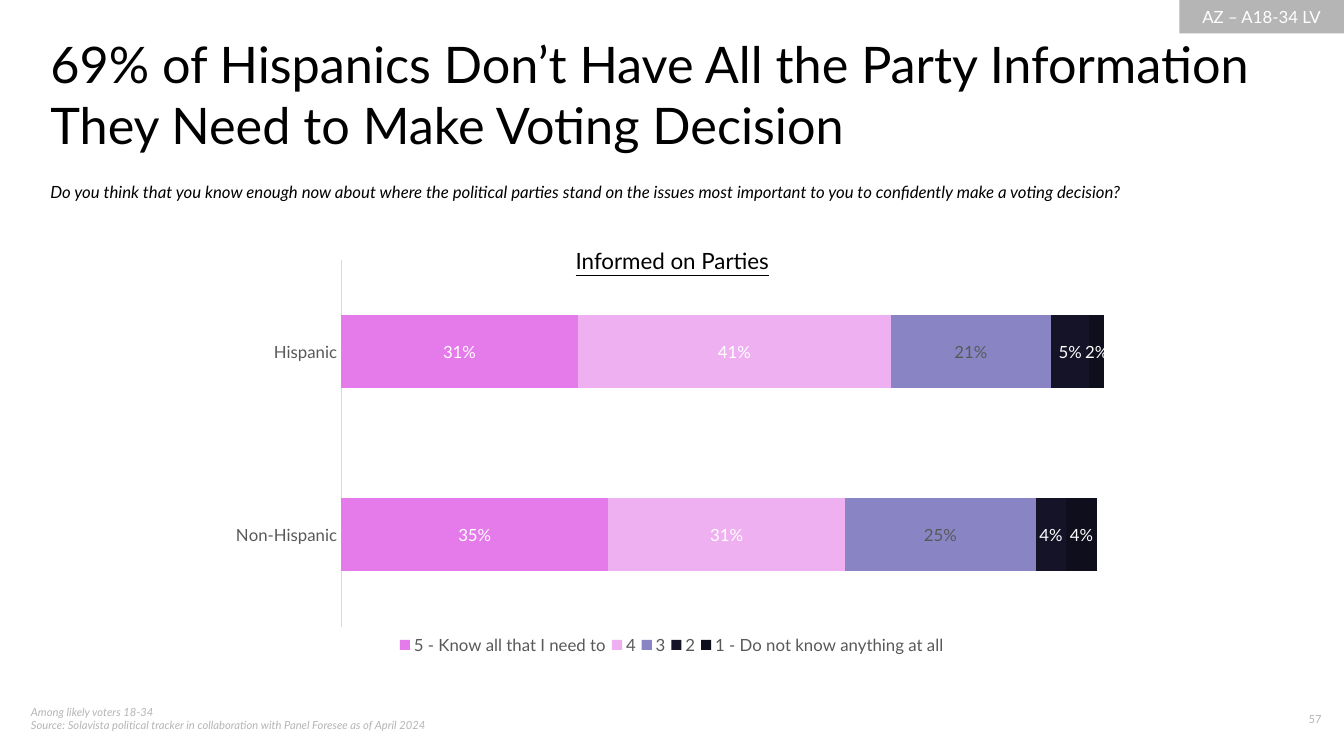
from lxml import etree
from pptx import Presentation
from pptx import util as u
from pptx.chart.data import CategoryChartData
from pptx.dml.color import RGBColor
from pptx.enum import chart as charts, shapes, text
from pptx.oxml import ns

COLORS = {"black": "000000", "white": "FFFFFF", "gray": "B5B5B5",
          "label": "595959", "axis": "D9D9D9"}
SERIES = [
    ("5 - Know all that I need to", (0.31, 0.35), "E57BEA", "white"),
    ("4", (0.41, 0.31), "EFB0F2", "white"),
    ("3", (0.21, 0.25), "8985C4", "label"),
    ("2", (0.05, 0.04), "141327", "white"),
    ("1 - Do not know anything at all", (0.02, 0.04), "0F0E1D", "white"),
]
LEFT, CENTER, RIGHT = text.PP_ALIGN.LEFT, text.PP_ALIGN.CENTER, text.PP_ALIGN.RIGHT
TOP, MIDDLE = text.MSO_ANCHOR.TOP, text.MSO_ANCHOR.MIDDLE


def set_font(font, size, color, **formats):
    for name, value in {"name": "Lato", "size": u.Pt(size), **formats}.items():
        setattr(font, name, value)
    font.color.rgb = RGBColor.from_string(COLORS[color])


def insert_layout(parent, index, target, **fractions):
    """Place a chart part by fractions of the chart area."""
    for old in parent.findall(ns.qn("c:layout")):
        parent.remove(old)
    layout = etree.Element(ns.qn("c:layout"))
    manual = etree.SubElement(layout, ns.qn("c:manualLayout"))
    values = {"xMode": "edge", "yMode": "edge", **fractions}
    if target:
        values = {"layoutTarget": target, **values}
    for name, value in values.items():
        etree.SubElement(manual, ns.qn(f"c:{name}")).set("val", str(value))
    parent.insert(index, layout)


presentation = Presentation()
presentation.slide_width, presentation.slide_height = u.Cm(33.87), u.Cm(19.05)
slide = presentation.slides.add_slide(presentation.slide_layouts[6])

# Chart
data = CategoryChartData(number_format="0%")
data.categories = ["Hispanic", "Non-Hispanic"]
for name, values, fill, label_color in SERIES:
    data.add_series(name, values)
chart = slide.shapes.add_chart(
    charts.XL_CHART_TYPE.BAR_STACKED,
    u.Cm(5.64), u.Cm(6.15), u.Cm(22.58), u.Cm(10.92), data).chart
set_font(chart.font, 10, "black")
chart.has_title = False

plot = chart.plots[0]
plot.gap_width, plot.overlap, plot.vary_by_categories = 150, 100, False
for series, (name, values, fill, label_color) in zip(plot.series, SERIES):
    series.format.fill.solid()
    series.format.fill.fore_color.rgb = RGBColor.from_string(fill)
    labels = series.data_labels
    for attribute, value in {"show_value": True, "number_format": "0%",
                             "number_format_is_linked": False,
                             "position": charts.XL_LABEL_POSITION.CENTER}.items():
        setattr(labels, attribute, value)
    set_font(labels.font, 12, label_color)

categories = chart.category_axis
categories.reverse_order = True
categories.major_tick_mark = categories.minor_tick_mark = charts.XL_TICK_MARK.NONE
categories.format.line.color.rgb = RGBColor.from_string(COLORS["axis"])
categories.format.line.width = u.Pt(0.75)
set_font(categories.tick_labels.font, 12, "label")

percent_axis = chart.value_axis
percent_axis.minimum_scale, percent_axis.maximum_scale = 0, 1
percent_axis.has_major_gridlines = False
percent_axis.visible = False

chart.has_legend = True
legend = chart.legend
legend.position = charts.XL_LEGEND_POSITION.BOTTOM
legend.include_in_layout = False
set_font(legend.font, 12, "label")

plot_area = chart.element.find(".//" + ns.qn("c:plotArea"))
insert_layout(plot_area, 0, "inner", x=0.131, y=0.036, w=0.852, h=0.847)
insert_layout(chart.element.find(".//" + ns.qn("c:legend")), 1, None,
              x=0.19, y=0.89, w=0.62, h=0.07)

# Text: place in cm, inset or not, anchor, alignment, size, colour, formats, words
TEXTS = [
    ((29.72, 0, 4.15, 0.84), True, MIDDLE, CENTER, 12, "white", {}, "AZ – A18-34 LV"),
    ((0.53, 17.65, 12.98, 1.02), True, TOP, LEFT, 8, "gray", {"italic": True},
     "Among likely voters 18-34\n"
     "Source: Solavista political tracker in collaboration with Panel Foresee "
     "as of April 2024"),
    ((31.32, 17.83, 2.24, 0.69), True, TOP, RIGHT, 8, "gray", {}, "57"),
    ((1.27, 0.84, 30.48, 3.07), False, TOP, LEFT, 36, "black", {},
     "69% of Hispanics Don’t Have All the Party Information "
     "They Need to Make Voting Decision"),
    ((1.27, 4.57, 27.97, 0.51), False, TOP, LEFT, 12, "black", {"italic": True},
     "Do you think that you know enough now about where the political parties stand "
     "on the issues most important to you to confidently make a voting decision?"),
    ((10.67, 5.54, 12.55, 2.06), True, MIDDLE, CENTER, 16, "black",
     {"underline": True}, "Informed on Parties"),
]
for place, inset, anchor, alignment, size, color, formats, words in TEXTS:
    box = [u.Cm(length) for length in place]
    if color == "white":
        shape = slide.shapes.add_shape(shapes.MSO_SHAPE.RECTANGLE, *box)
        shape.shadow.inherit = False
        shape.fill.solid()
        shape.fill.fore_color.rgb = RGBColor.from_string(COLORS["gray"])
        shape.line.fill.background()
    else:
        shape = slide.shapes.add_textbox(*box)
    frame = shape.text_frame
    frame.word_wrap, frame.vertical_anchor = True, anchor
    if not inset:
        for side in ("left", "top", "right", "bottom"):
            setattr(frame, f"margin_{side}", 0)
    paragraph = frame.paragraphs[0]
    paragraph.text, paragraph.alignment = words, alignment
    for run in paragraph.runs:
        set_font(run.font, size, color, **formats)

presentation.save("out.pptx")
